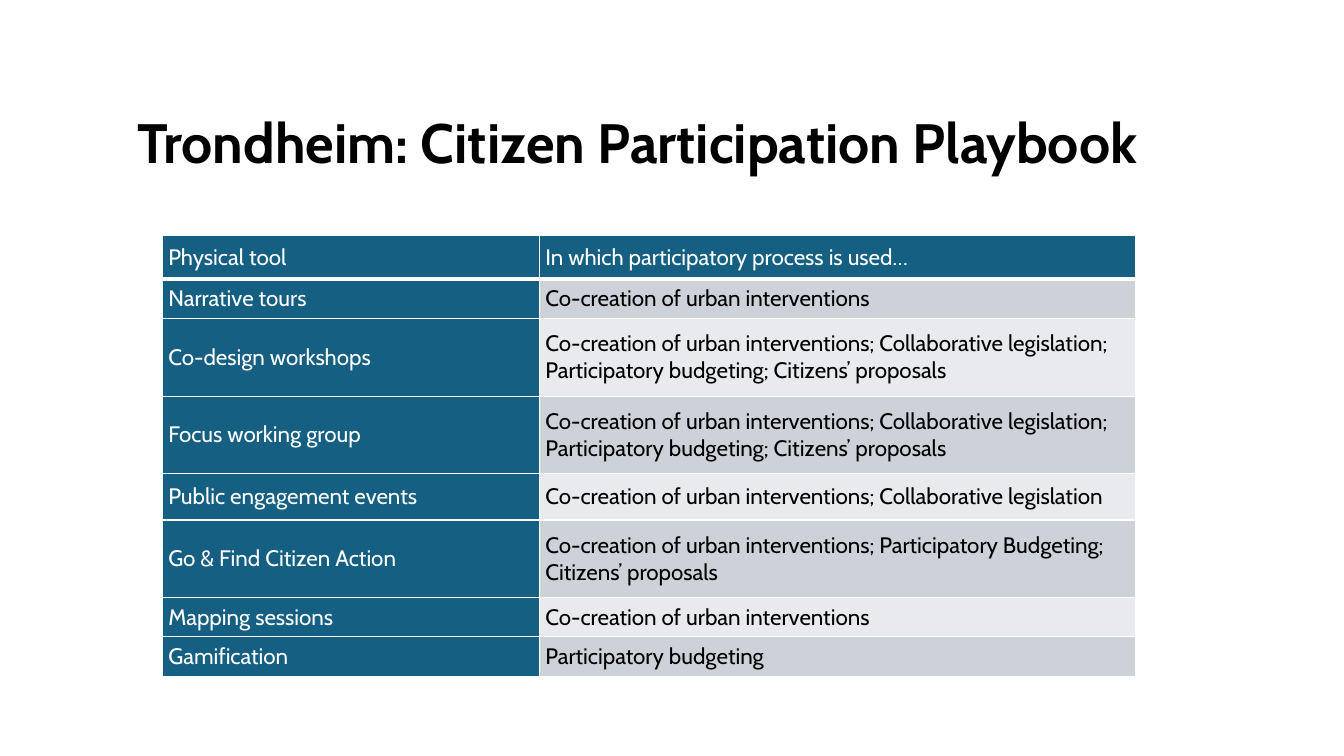
from dataclasses import dataclass

import pptx
import pptx.dml.color
import pptx.enum.text
import pptx.oxml
import pptx.oxml.ns
import pptx.presentation
import pptx.shapes.autoshape
import pptx.slide
import pptx.table
import pptx.text.text
import pptx.util

EMU_PER_PX = 9144


@dataclass(frozen=True)
class Theme:
    font: str = "Cabin"
    title_size: float = 39.6
    table_size: float = 16
    ink: str = "000000"
    light: str = "FFFFFF"
    accent: str = "156082"
    bands: tuple[str, str] = ("CCD2D8", "E8EAED")
    border: float = 1
    header_border: float = 3


@dataclass(frozen=True)
class Area:
    left: int
    top: int
    width: int
    height: int


@dataclass(frozen=True)
class ToolRow:
    tool: str
    processes: str
    height: int


THEME = Theme()
PAGE_WIDTH, PAGE_HEIGHT = 1333, 750
TITLE_AREA = Area(126, 106, 1045, 76)
TABLE_AREA = Area(161, 234, 965, 437)
COLUMN_WIDTHS = (374, 591)
CELL_INSET = 6

CREATION = "Co-creation of urban interventions"
LEGISLATION = f"{CREATION}; Collaborative legislation"
ALL_PROCESSES = f"{LEGISLATION}; Participatory budgeting; Citizens’ proposals"

ROWS = (
    ToolRow("Physical tool", "In which participatory process is used…", 43),
    ToolRow("Narrative tours", CREATION, 39),
    ToolRow("Co-design workshops", ALL_PROCESSES, 77),
    ToolRow("Focus working group", ALL_PROCESSES, 77),
    ToolRow("Public engagement events", LEGISLATION, 46),
    ToolRow("Go & Find Citizen Action", f"{CREATION}; Participatory Budgeting; Citizens’ proposals", 77),
    ToolRow("Mapping sessions", CREATION, 39),
    ToolRow("Gamification", "Participatory budgeting", 39),
)


def px(length: int) -> pptx.util.Emu:
    return pptx.util.Emu(length * EMU_PER_PX)


def rgb(value: str) -> pptx.dml.color.RGBColor:
    return pptx.dml.color.RGBColor.from_string(value)


def format_runs(para: pptx.text.text._Paragraph, size: float, color: str, bold: bool) -> None:
    para.alignment = pptx.enum.text.PP_ALIGN.LEFT
    for span in para.runs:
        span.font.name = THEME.font
        span.font.size = pptx.util.Pt(size)
        span.font.bold = bold
        span.font.color.rgb = rgb(color)


def draw_title(page: pptx.slide.Slide, text: str, area: Area) -> None:
    title = page.shapes.title
    title.left, title.top = px(area.left), px(area.top)
    title.width, title.height = px(area.width), px(area.height)
    frame = title.text_frame
    frame.text = text
    frame.word_wrap = True
    frame.auto_size = pptx.enum.text.MSO_AUTO_SIZE.NONE
    frame.vertical_anchor = pptx.enum.text.MSO_ANCHOR.MIDDLE
    para = frame.paragraphs[0]
    para.line_spacing = 0.9
    format_runs(para, THEME.title_size, THEME.ink, True)


def set_borders(cell: pptx.table._Cell, bottom: float) -> None:
    properties = cell._tc.get_or_add_tcPr()
    widths = {"lnL": THEME.border, "lnR": THEME.border, "lnT": THEME.border, "lnB": bottom}
    for position, (side, width) in enumerate(widths.items()):
        line = pptx.oxml.parse_xml(
            f'<a:{side} {pptx.oxml.ns.nsdecls("a")} w="{pptx.util.Pt(width)}">'
            f'<a:solidFill><a:srgbClr val="{THEME.light}"/></a:solidFill></a:{side}>'
        )
        properties.insert(position, line)


def draw_cell(cell: pptx.table._Cell, text: str, fill: str, color: str, bottom: float) -> None:
    cell.text_frame.text = text
    cell.vertical_anchor = pptx.enum.text.MSO_ANCHOR.MIDDLE
    cell.margin_left = cell.margin_right = px(CELL_INSET)
    cell.margin_top = cell.margin_bottom = 0
    cell.fill.solid()
    cell.fill.fore_color.rgb = rgb(fill)
    format_runs(cell.text_frame.paragraphs[0], THEME.table_size, color, False)
    set_borders(cell, bottom)


def draw_table(page: pptx.slide.Slide, rows: tuple[ToolRow, ...], area: Area) -> None:
    frame = page.shapes.add_table(
        len(rows), len(COLUMN_WIDTHS),
        px(area.left), px(area.top), px(area.width), px(area.height),
    )
    table = frame.table
    for column, width in zip(table.columns, COLUMN_WIDTHS):
        column.width = px(width)
    for index, row in enumerate(rows):
        table.rows[index].height = px(row.height)
        header = index == 0
        bottom = THEME.header_border if header else THEME.border
        fill = THEME.accent if header else THEME.bands[(index - 1) % 2]
        color = THEME.light if header else THEME.ink
        draw_cell(table.cell(index, 0), row.tool, THEME.accent, THEME.light, bottom)
        draw_cell(table.cell(index, 1), row.processes, fill, color, bottom)


def main() -> None:
    deck = pptx.Presentation()
    deck.slide_width, deck.slide_height = px(PAGE_WIDTH), px(PAGE_HEIGHT)
    page = deck.slides.add_slide(deck.slide_layouts.get_by_name("Title Only"))
    draw_title(page, "Trondheim: Citizen Participation Playbook", TITLE_AREA)
    draw_table(page, ROWS, TABLE_AREA)
    deck.save("out.pptx")


if __name__ == "__main__":
    main()
